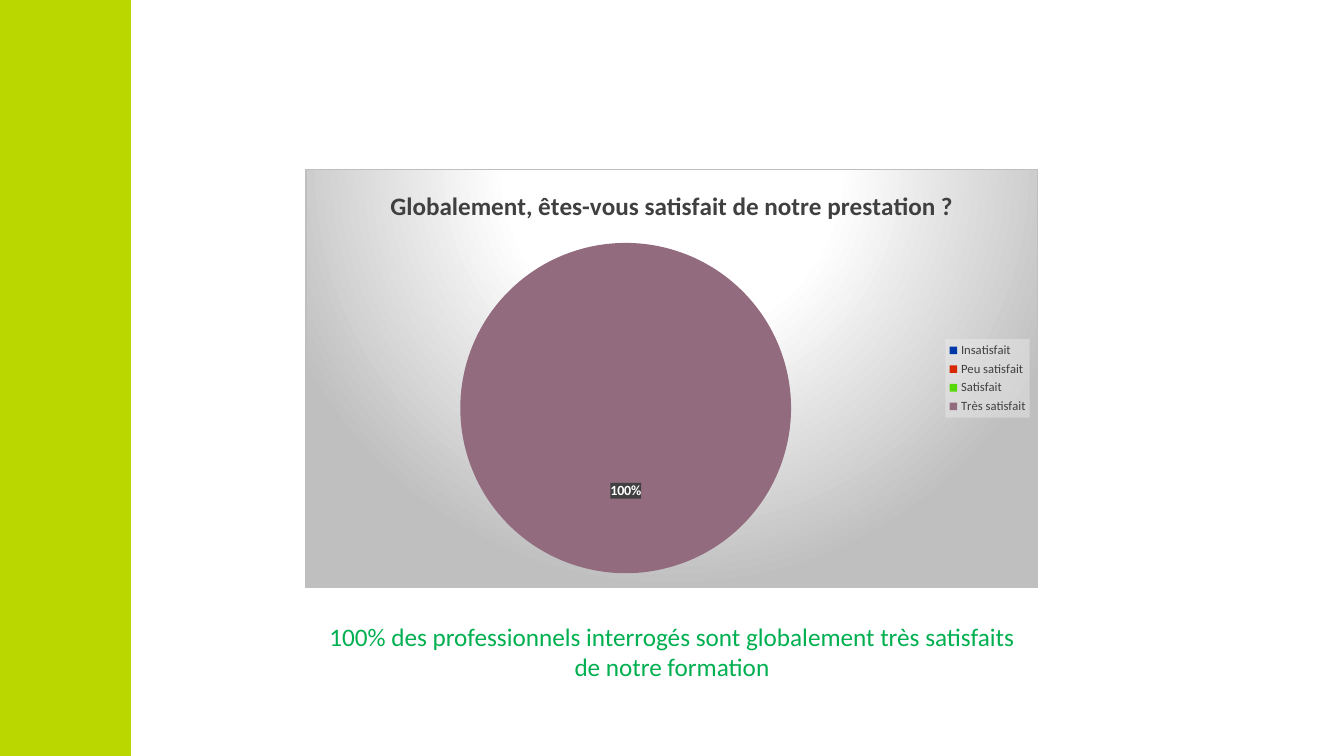
import lxml.etree
import pptx
import pptx.chart.data
import pptx.dml.color
import pptx.enum.chart
import pptx.enum.shapes
import pptx.enum.text
import pptx.oxml
import pptx.oxml.ns
import pptx.util

Inches = pptx.util.Inches
FONT = "Calibri"
QUESTION = "Globalement, êtes-vous satisfait de notre prestation ?"
CONCLUSION = "100% des professionnels interrogés sont globalement très satisfaits de notre formation"
ANSWERS = [
    ("Insatisfait", 0, "0038A8"),
    ("Peu satisfait", 0, "D82705"),
    ("Satisfait", 0, "56D80A"),
    ("Très satisfait", 100, "936B7F"),
]
NAMESPACES = pptx.oxml.ns.nsdecls("c", "a")
BACKDROP = (
    f'<c:spPr {NAMESPACES}><a:gradFill><a:gsLst>'
    '<a:gs pos="0"><a:srgbClr val="FFFFFF"/></a:gs>'
    '<a:gs pos="39000"><a:srgbClr val="FFFFFF"/></a:gs>'
    '<a:gs pos="100000"><a:srgbClr val="BFBFBF"/></a:gs></a:gsLst>'
    '<a:path path="circle"><a:fillToRect l="50000" t="-80000" r="50000" b="180000"/></a:path>'
    '</a:gradFill><a:ln w="9525"><a:solidFill><a:srgbClr val="BFBFBF"/></a:solidFill></a:ln></c:spPr>'
)


def rgb(value):
    """Return the colour for a hex string."""
    return pptx.dml.color.RGBColor.from_string(value)


def style_font(font, size, color, bold=False):
    """Apply the slide's typeface with a size, colour and weight."""
    font.name = FONT
    font.size = pptx.util.Pt(size)
    font.bold = bold
    font.color.rgb = rgb(color)


def translucent_fill(color, percent):
    """Return chart shape properties with a partly opaque fill."""
    return pptx.oxml.parse_xml(
        f'<c:spPr {NAMESPACES}><a:solidFill><a:srgbClr val="{color}">'
        f'<a:alpha val="{percent * 1000}"/></a:srgbClr></a:solidFill></c:spPr>'
    )


def add_side_band(slide, left, top, width, height):
    """Draw the green band along the slide edge."""
    band = slide.shapes.add_shape(
        pptx.enum.shapes.MSO_SHAPE.RECTANGLE, left, top, width, height)
    band.shadow.inherit = False
    band.fill.solid()
    band.fill.fore_color.rgb = rgb("BAD800")
    band.line.fill.background()


def style_labels(series):
    """Show a percentage on each answer that was chosen."""
    labels = series.data_labels
    labels.show_percentage = True
    labels.show_value = False
    labels.number_format = "0%"
    labels.number_format_is_linked = False
    labels.position = pptx.enum.chart.XL_LABEL_POSITION.CENTER
    style_font(labels.font, 10, "FFFFFF", True)
    element = labels._element
    element.find(pptx.oxml.ns.qn("c:txPr")).addprevious(translucent_fill("404040", 85))
    unchosen = [index for index, answer in enumerate(ANSWERS) if answer[1] == 0]
    for place, index in enumerate(unchosen):
        element.insert(place, pptx.oxml.parse_xml(
            f'<c:dLbl {NAMESPACES}><c:idx val="{index}"/><c:delete val="1"/></c:dLbl>'))


def add_satisfaction_chart(slide, left, top, width, height):
    """Place the satisfaction pie with its title and legend."""
    data = pptx.chart.data.CategoryChartData()
    data.categories = [name for name, _, _ in ANSWERS]
    data.add_series(QUESTION, [value for _, value, _ in ANSWERS])
    chart = slide.shapes.add_chart(
        pptx.enum.chart.XL_CHART_TYPE.PIE, left, top, width, height, data).chart
    style_font(chart.font, 10, "000000")

    chart.has_title = True
    title = chart.chart_title
    title.include_in_layout = False
    title.text_frame.text = QUESTION
    style_font(title.text_frame.paragraphs[0].runs[0].font, 18, "404040", True)

    chart.has_legend = True
    legend = chart.legend
    legend.position = pptx.enum.chart.XL_LEGEND_POSITION.RIGHT
    legend.include_in_layout = False
    style_font(legend.font, 9, "404040")
    legend._element.find(pptx.oxml.ns.qn("c:txPr")).addprevious(translucent_fill("F2F2F2", 39))

    plot = chart.plots[0]
    plot.vary_by_categories = True
    series = plot.series[0]
    for index, (_, _, color) in enumerate(ANSWERS):
        fill = series.points[index].format.fill
        fill.solid()
        fill.fore_color.rgb = rgb(color)
    style_labels(series)
    chart._chartSpace.find(pptx.oxml.ns.qn("c:chart")).addnext(pptx.oxml.parse_xml(BACKDROP))


def add_conclusion(slide, left, top, width, height):
    """Write the centred conclusion below the chart."""
    frame = slide.shapes.add_textbox(left, top, width, height).text_frame
    frame.word_wrap = True
    frame.auto_size = pptx.enum.text.MSO_AUTO_SIZE.SHAPE_TO_FIT_TEXT
    frame.text = CONCLUSION
    para = frame.paragraphs[0]
    para.alignment = pptx.enum.text.PP_ALIGN.CENTER
    style_font(para.runs[0].font, 18, "00B050")


def main():
    """Build the satisfaction slide and save the deck."""
    deck = pptx.Presentation()
    deck.slide_width = Inches(13.33)
    deck.slide_height = Inches(7.5)
    slide = deck.slides.add_slide(deck.slide_layouts[6])
    left, width = Inches(3.03), Inches(7.27)
    add_side_band(slide, 0, 0, Inches(1.3), deck.slide_height)
    add_satisfaction_chart(slide, left, Inches(1.68), width, Inches(4.15))
    add_conclusion(slide, left, Inches(6.11), width, Inches(0.71))
    deck.save("out.pptx")


if __name__ == "__main__":
    main()
